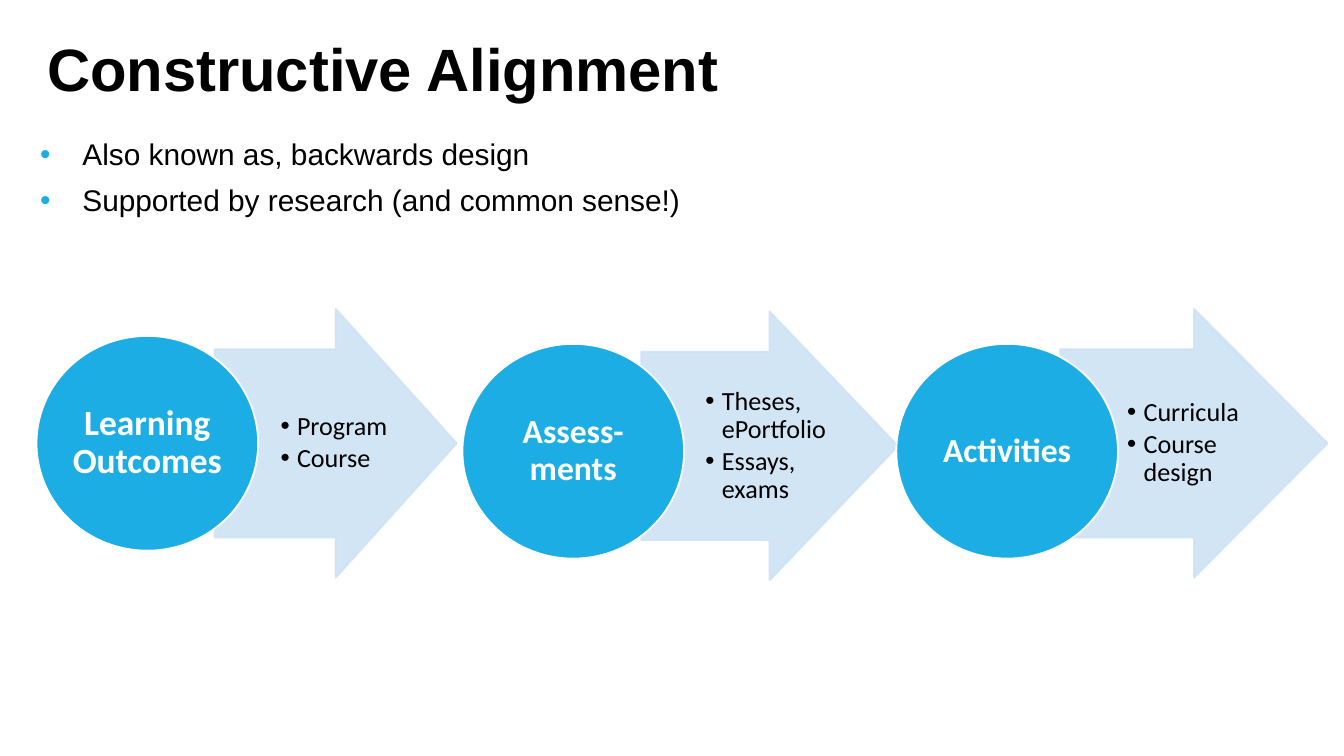
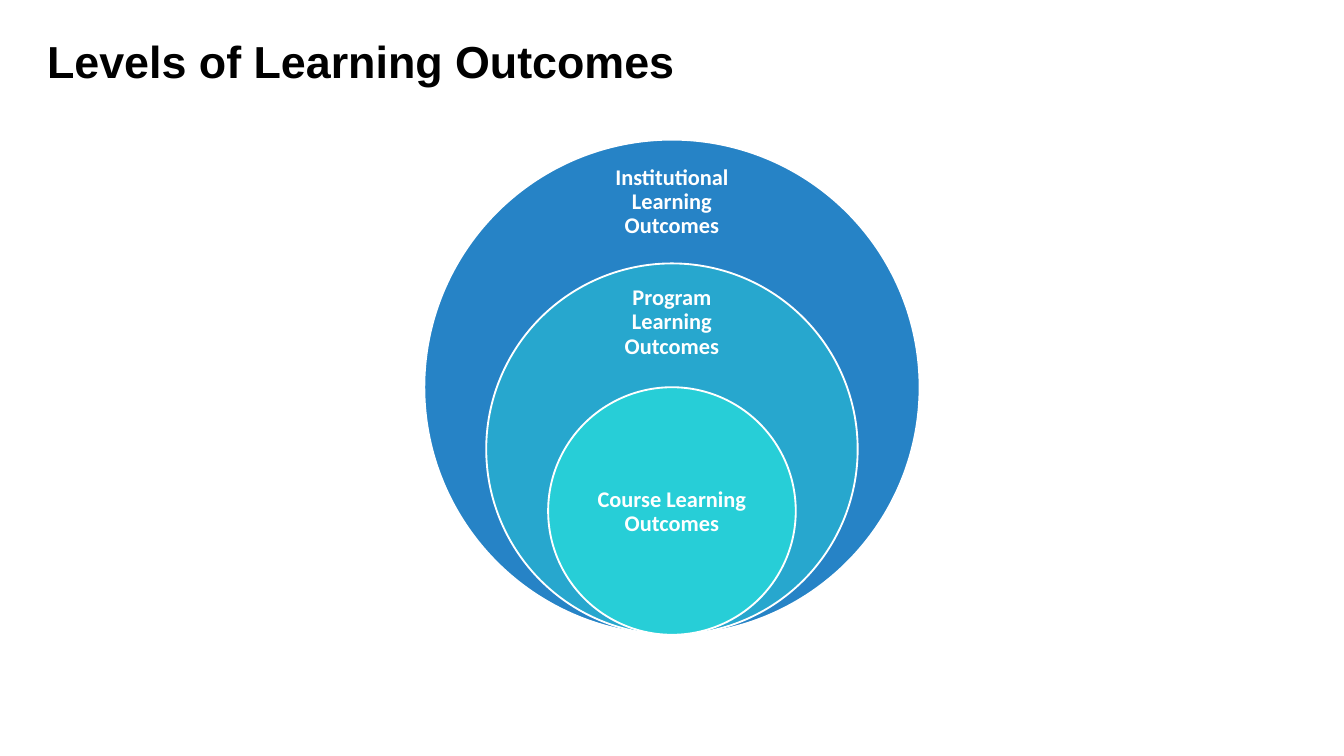
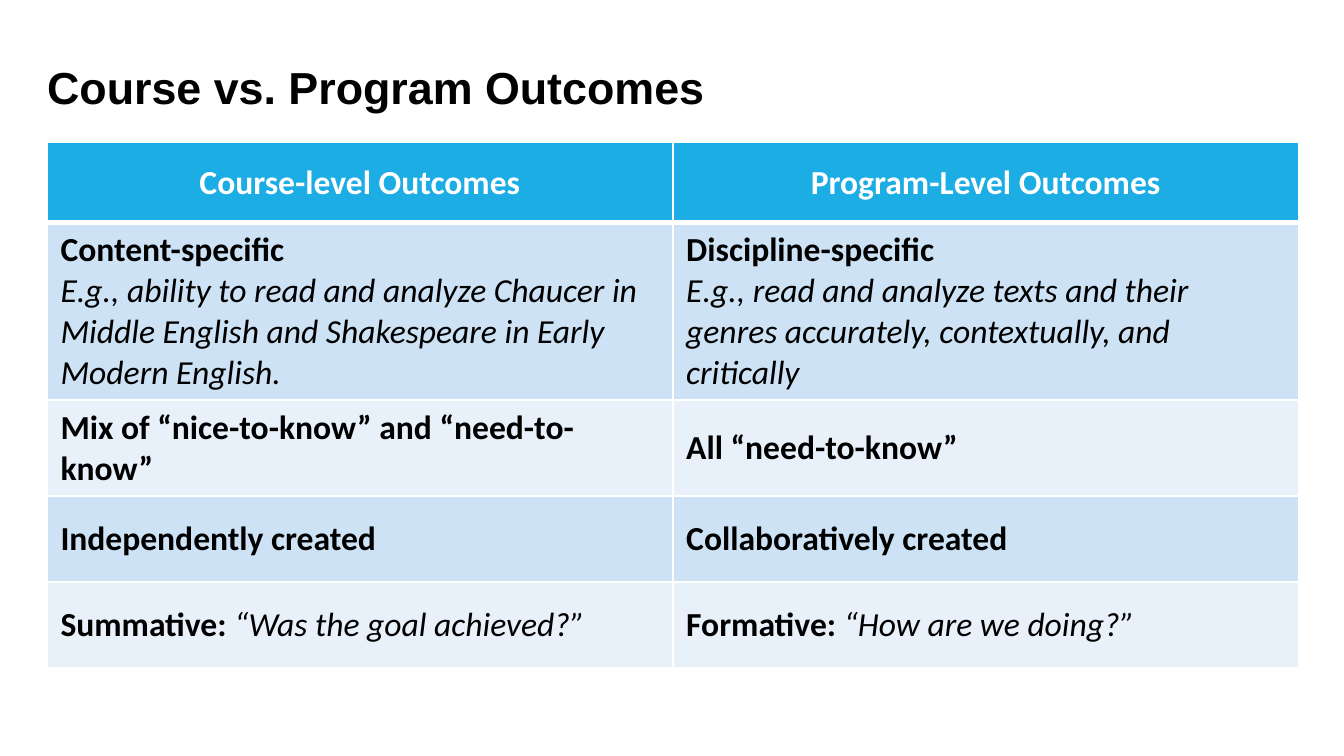
"""Build three slides on constructive alignment and learning outcomes."""
from lxml import etree
from pptx import Presentation
from pptx.dml.color import RGBColor
from pptx.enum.shapes import MSO_SHAPE
from pptx.enum.text import MSO_ANCHOR, MSO_AUTO_SIZE, PP_ALIGN
from pptx.oxml.ns import qn
from pptx.util import Cm, Pt

ARROW, OVAL = MSO_SHAPE.RIGHT_ARROW, MSO_SHAPE.OVAL
TOP, MIDDLE = MSO_ANCHOR.TOP, MSO_ANCHOR.MIDDLE
LEFT, CENTER = PP_ALIGN.LEFT, PP_ALIGN.CENTER
NO_AUTOFIT = MSO_AUTO_SIZE.NONE
TITLE_ONLY = 5
HEAD_FONT, DIAGRAM_FONT = "Arial", "Calibri"
COLORS = {
    "text": "000000",
    "white": "FFFFFF",
    "accent": "1CADE4",
    "pale": "CDE3F5",
    "paler": "E8F1FA",
    "institution": "2683C6",
    "program": "27A7CE",
    "course": "27CED7",
}
MARGIN, CONTENT_WIDTH = 0.89, 23.65

STAGES = [
    {"arrow": (4.06, 5.84, 4.57), "circle": (0.69, 6.35), "size": 19, "pad": 0.1,
     "label": "Learning Outcomes", "items": ["Program", "Course"]},
    {"arrow": (12.12, 5.89, 4.85), "circle": (8.74, 6.5), "size": 18, "pad": 0,
     "label": "Assess-ments", "items": ["Theses, ePortfolio", "Essays, exams"]},
    {"arrow": (20.04, 5.84, 5.05), "circle": (16.94, 6.5), "size": 18, "pad": 0,
     "label": "Activities", "items": ["Curricula", "Course design"]},
]
LEVELS = [
    ("Institutional Learning Outcomes", "institution", 1, 3.12, 1.4),
    ("Program Learning Outcomes", "program", 0.75, 5.44, 1.32),
    ("Course Learning Outcomes", "course", 0.5, 8.51, 2.34),
]
PLAIN_ITALIC = {"bold": False, "italic": True}
COMPARISON = [
    (1.52, ["Course-level Outcomes"], ["Program-Level Outcomes"]),
    (2.9,
     ["Content-specific",
      [("E.g., ability to read and analyze Chaucer in Middle English and "
        "Shakespeare in Early Modern English.", PLAIN_ITALIC)]],
     ["Discipline-specific",
      [("E.g., read and analyze texts and their genres accurately, "
        "contextually, and critically", PLAIN_ITALIC)]]),
    (1.52, ["Mix of “nice-to-know” and “need-to-know”"], ["All “need-to-know”"]),
    (1.63, ["Independently created"], ["Collaboratively created"]),
    (1.63,
     [[("Summative: ", {}), ("“Was the goal achieved?”", PLAIN_ITALIC)]],
     [[("Formative: ", {}), ("“How are we doing?”", PLAIN_ITALIC)]]),
]


def rgb(name):
    """Return the named colour."""
    return RGBColor.from_string(COLORS[name])


def add_bullet(paragraph, indent, color):
    """Give a paragraph a hanging, coloured bullet."""
    props = paragraph._p.get_or_add_pPr()
    props.set("marL", str(Cm(indent)))
    props.set("indent", str(-Cm(indent)))
    bullet_color = etree.SubElement(props, qn("a:buClr"))
    etree.SubElement(bullet_color, qn("a:srgbClr"), val=COLORS[color])
    etree.SubElement(props, qn("a:buFont"), typeface=HEAD_FONT)
    etree.SubElement(props, qn("a:buChar"), char="•")


def write(frame, paragraphs, font=DIAGRAM_FONT, size=18, color="text", bold=False,
          align=LEFT, spacing=0.9, before=0, indent=0, bullet_color="text"):
    """Write paragraphs, each a string or a list of (text, run format) pairs."""
    for index, content in enumerate(paragraphs):
        paragraph = frame.add_paragraph() if index else frame.paragraphs[0]
        if indent:
            add_bullet(paragraph, indent, bullet_color)
        paragraph.alignment = align
        paragraph.line_spacing = spacing
        paragraph.space_before = Pt(before if index else 0)
        runs = [(content, {})] if isinstance(content, str) else content
        for text, look in runs:
            run = paragraph.add_run()
            run.text = text
            run.font.name = font
            run.font.size = Pt(size)
            run.font.color.rgb = rgb(color)
            run.font.bold = look.get("bold", bold)
            run.font.italic = look.get("italic", False)


def prepare(frame, anchor=MIDDLE, pad_x=0.0, pad_y=0.0):
    """Set wrapping, anchor and insets of a text frame and return it."""
    frame.word_wrap = True
    frame.auto_size = NO_AUTOFIT
    frame.vertical_anchor = anchor
    frame.margin_left = frame.margin_right = Cm(pad_x)
    frame.margin_top = frame.margin_bottom = Cm(pad_y)
    return frame


def add_text(slide, box, paragraphs, anchor=MIDDLE, pad_x=0.0, pad_y=0.0, **look):
    """Add a text box at the given centimetre box."""
    holder = slide.shapes.add_textbox(*map(Cm, box))
    write(prepare(holder.text_frame, anchor, pad_x, pad_y), paragraphs, **look)


def add_filled(slide, kind, box, fill, line="white"):
    """Add a preset shape with a solid fill and a one-point line."""
    shape = slide.shapes.add_shape(kind, *map(Cm, box))
    shape.shadow.inherit = False
    shape.fill.solid()
    shape.fill.fore_color.rgb = rgb(fill)
    shape.line.color.rgb = rgb(line)
    shape.line.width = Pt(1)
    return shape


def add_titled_slide(deck, title, size, top, height):
    """Add a slide with its title placed and formatted."""
    slide = deck.slides.add_slide(deck.slide_layouts[TITLE_ONLY])
    holder = slide.shapes.title
    holder.left, holder.top = Cm(MARGIN), Cm(top)
    holder.width, holder.height = Cm(CONTENT_WIDTH), Cm(height)
    write(prepare(holder.text_frame, TOP), [title], font=HEAD_FONT, size=size, bold=True)
    return slide


def add_stage(slide, stage):
    """Add one step: an arrow with its items and a labelled circle."""
    left, top, width = stage["arrow"]
    arrow = add_filled(slide, ARROW, (left, top, width, 5.08), "pale", "pale")
    arrow.adjustments[0], arrow.adjustments[1] = 0.7, 0.5
    for color in arrow._element.spPr.iter(qn("a:srgbClr")):
        etree.SubElement(color, qn("a:alpha"), val="90000")
    add_text(slide, (left + width / 4, top + 0.76, width * 0.49, 3.56), stage["items"],
             pad_x=stage["pad"], size=14, before=2, indent=0.31)
    circle = add_filled(slide, OVAL, (*stage["circle"], 4.19, 4.06), "accent")
    write(prepare(circle.text_frame), [stage["label"]], size=stage["size"],
          color="white", bold=True, align=CENTER)


def add_nested_circles(slide, center, bottom, diameter):
    """Add circles that share their lowest point, each with a label."""
    for label, fill, scale, label_top, label_height in LEVELS:
        across = diameter * scale
        add_filled(slide, OVAL, (center - across / 2, bottom - across, across, across), fill)
        add_text(slide, (center - 1.65, label_top, 3.3, label_height), [label],
                 pad_x=0.23, pad_y=0.23, size=12, color="white", bold=True, align=CENTER)


def add_borders(cell, top, bottom):
    """Draw white cell borders with the given top and bottom widths."""
    for side, width in (("L", 1), ("R", 1), ("T", top), ("B", bottom)):
        border = etree.SubElement(cell._tc.get_or_add_tcPr(), qn(f"a:ln{side}"),
                                  w=str(Pt(width)))
        fill = etree.SubElement(border, qn("a:solidFill"))
        etree.SubElement(fill, qn("a:srgbClr"), val=COLORS["white"])


def add_comparison(slide, left, top, width):
    """Add the two-column table under a heading row."""
    height = sum(row[0] for row in COMPARISON)
    table = slide.shapes.add_table(len(COMPARISON), 2, Cm(left), Cm(top),
                                   Cm(width), Cm(height)).table
    for row, (row_height, *contents) in enumerate(COMPARISON):
        table.rows[row].height = Cm(row_height)
        heading = row == 0
        fill = "accent" if heading else ("paler", "pale")[row % 2]
        for column, paragraphs in enumerate(contents):
            cell = table.cell(row, column)
            add_borders(cell, 3 if row == 1 else 1, 3 if heading else 1)
            cell.fill.solid()
            cell.fill.fore_color.rgb = rgb(fill)
            cell.vertical_anchor = MIDDLE
            write(cell.text_frame, paragraphs, bold=True, spacing=1.0,
                  color="white" if heading else "text", align=CENTER if heading else LEFT)


def main():
    """Build and save the deck."""
    deck = Presentation()
    deck.slide_width, deck.slide_height = Cm(25.4), Cm(14.29)

    alignment = add_titled_slide(deck, "Constructive Alignment", 32, 0.76, 1.96)
    add_text(alignment, (0.76, 2.64, CONTENT_WIDTH, 2.46),
             ["Also known as, backwards design", "Supported by research (and common sense!)"],
             anchor=TOP, font=HEAD_FONT, size=16, before=7.5, indent=0.8,
             bullet_color="accent")
    for stage in STAGES:
        add_stage(alignment, stage)

    levels = add_titled_slide(deck, "Levels of Learning Outcomes", 24, 0.76, 2.77)
    add_nested_circles(levels, center=12.7, bottom=12, diameter=9.36)

    comparison = add_titled_slide(deck, "Course vs. Program Outcomes", 24, 1.24, 1.93)
    add_comparison(comparison, MARGIN, 2.69, CONTENT_WIDTH)

    deck.save("out.pptx")


if __name__ == "__main__":
    main()
